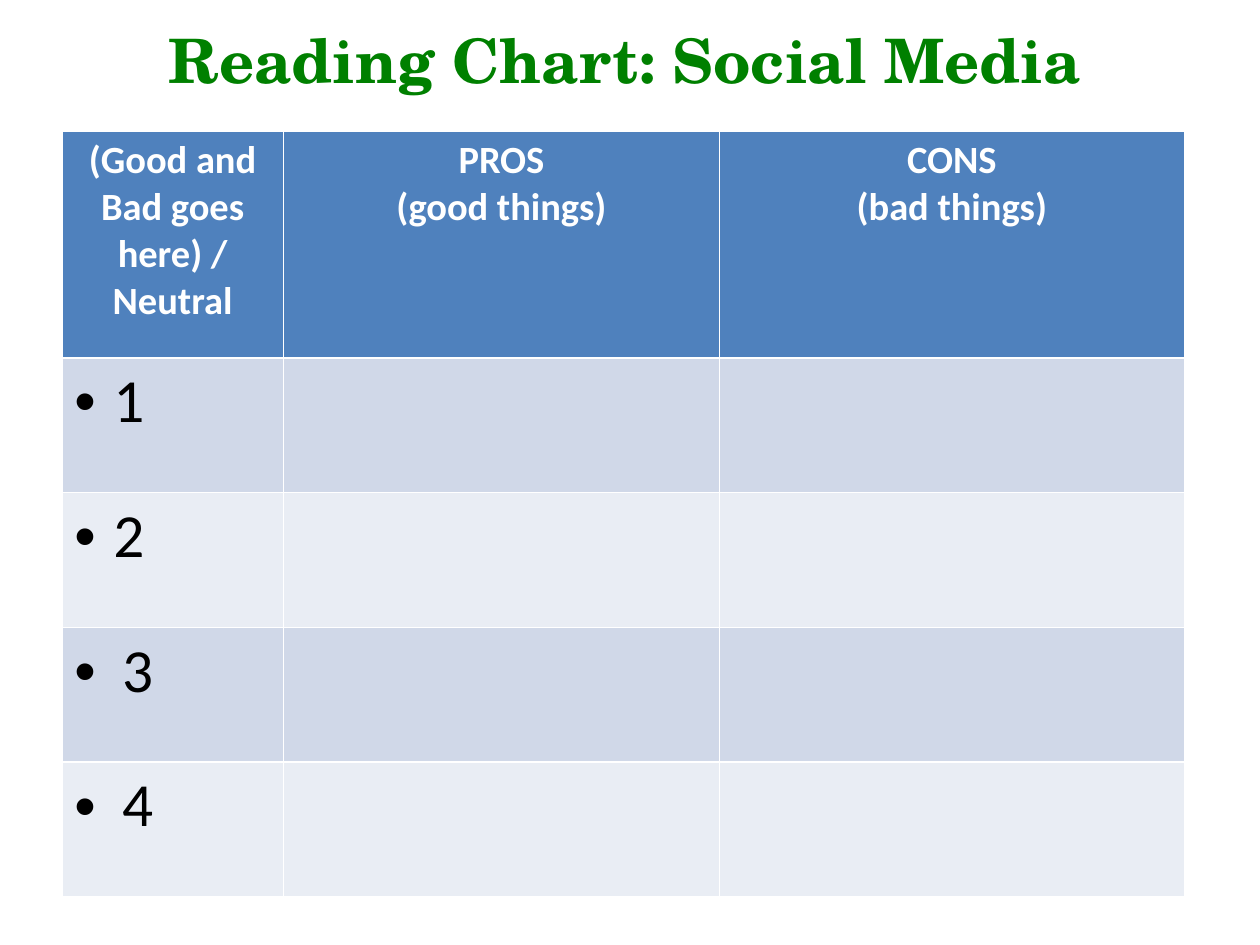
from lxml import etree
from pptx import Presentation
from pptx.dml.color import RGBColor
from pptx.enum.text import MSO_ANCHOR, PP_ALIGN
from pptx.oxml.ns import qn
from pptx.util import Inches, Pt

GREEN = RGBColor(0x00, 0x80, 0x00)
BLUE = RGBColor(0x4F, 0x81, 0xBD)
BAND_DARK = RGBColor(0xD0, 0xD8, 0xE8)
BAND_LIGHT = RGBColor(0xE9, 0xED, 0xF4)
WHITE = RGBColor(0xFF, 0xFF, 0xFF)
BLACK = RGBColor(0x00, 0x00, 0x00)


def write_text(text_frame, text, size, color, font="Calibri", bold=False,
               align=PP_ALIGN.LEFT, bullet_indent=None):
    """Write each line of text as one formatted paragraph."""
    text_frame.text = text
    for paragraph in text_frame.paragraphs:
        paragraph.alignment = align
        for run in paragraph.runs:
            run.font.name = font
            run.font.size = Pt(size)
            run.font.bold = bold
            run.font.color.rgb = color
        if bullet_indent is not None:
            properties = paragraph._p.get_or_add_pPr()
            properties.set("marL", str(Inches(bullet_indent)))
            properties.set("indent", str(-Inches(bullet_indent)))
            bullet_font = etree.SubElement(properties, qn("a:buFont"))
            bullet_font.set("typeface", "Arial")
            etree.SubElement(properties, qn("a:buChar")).set("char", "•")


presentation = Presentation()
presentation.slide_width = Inches(10)
presentation.slide_height = Inches(7.5)
slide = presentation.slides.add_slide(presentation.slide_layouts[5])

# Title
title = slide.shapes.title
title.left, title.top = Inches(0.51), Inches(0.12)
title.width, title.height = Inches(8.9), Inches(0.69)
title.text_frame.word_wrap = True
title.text_frame.vertical_anchor = MSO_ANCHOR.MIDDLE
write_text(title.text_frame, "Reading Chart: Social Media", size=35, color=GREEN,
           font="TeX Gyre Schola", bold=True, align=PP_ALIGN.CENTER)

# Table grid: the default table style draws the white borders
headers = ["(Good and Bad goes here) /\nNeutral", "PROS\n(good things)",
           "CONS\n(bad things)"]
column_widths = [1.76, 3.46, 3.69]
row_heights = [1.8] + [1.07] * 4
table = slide.shapes.add_table(
    len(row_heights), len(column_widths), Inches(0.49), Inches(1.04),
    Inches(sum(column_widths)), Inches(sum(row_heights))).table
for column, width in zip(table.columns, column_widths):
    column.width = Inches(width)
for row, height in zip(table.rows, row_heights):
    row.height = Inches(height)

# Row fills
row_fills = [BLUE] + [BAND_DARK, BAND_LIGHT] * 2
for row, color in zip(table.rows, row_fills):
    for cell in row.cells:
        cell.fill.solid()
        cell.fill.fore_color.rgb = color

# Header row
for cell, header in zip(table.rows[0].cells, headers):
    write_text(cell.text_frame, header, size=22, color=WHITE, bold=True,
               align=PP_ALIGN.CENTER)

# Numbered rows
for number, indent in enumerate([0.31, 0.31, 0.38, 0.38], start=1):
    write_text(table.cell(number, 0).text_frame, str(number), size=35, color=BLACK,
               bullet_indent=indent)

presentation.save("out.pptx")
